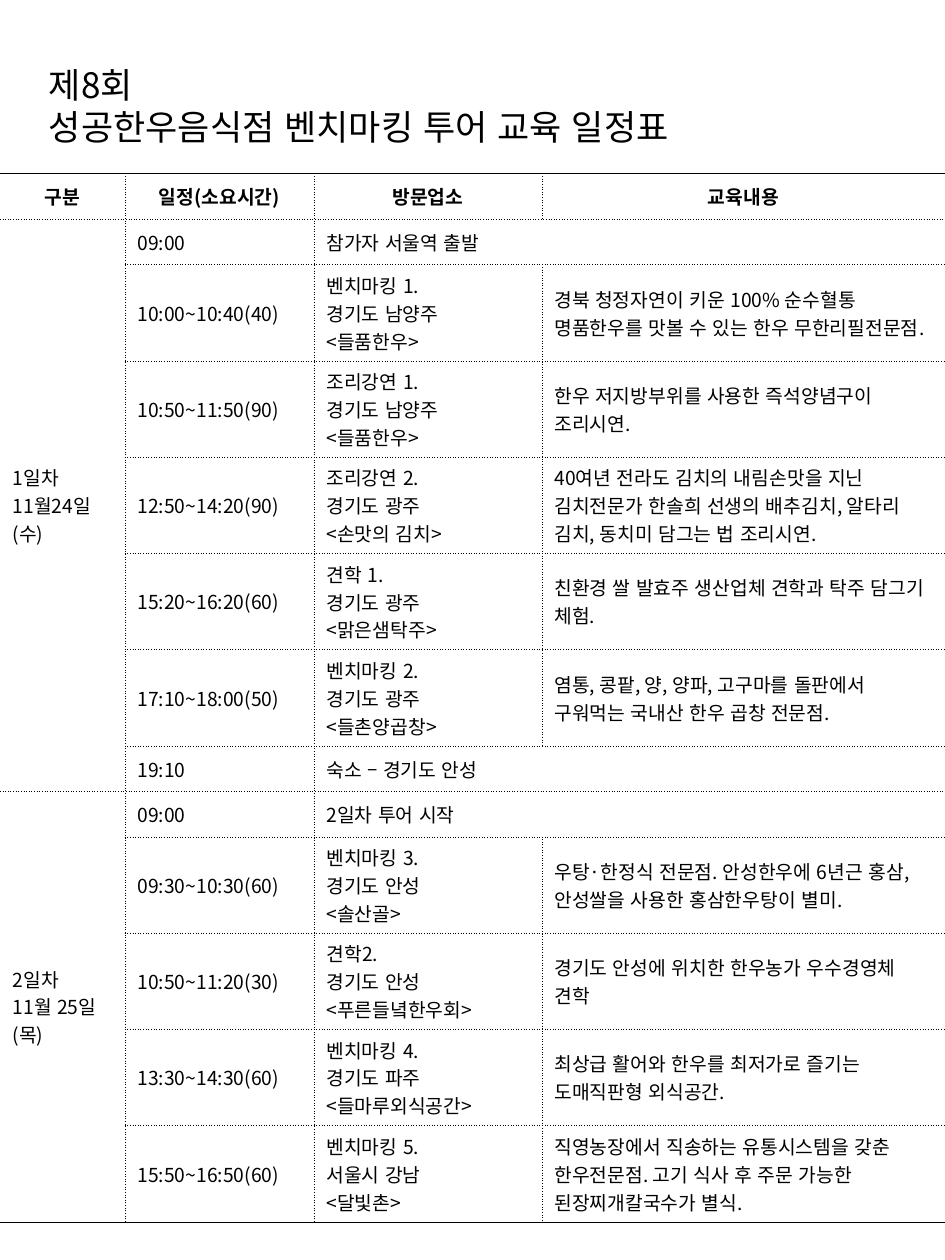
from itertools import product

from lxml.etree import SubElement
from pptx import Presentation
from pptx.dml.color import RGBColor
from pptx.enum.lang import MSO_LANGUAGE_ID
from pptx.enum.text import MSO_ANCHOR, PP_ALIGN
from pptx.oxml import parse_xml
from pptx.oxml.ns import nsdecls, qn
from pptx.util import Pt

COLORS = {"text": "000000", "line": "000000"}
COLUMN_WIDTHS = [71.4, 108.0, 130.2, 230.4]
SHORT_ROW, TALL_ROW = 26, 55

HEADINGS = ["구분", "일정(소요시간)", "방문업소", "교육내용"]

# Each day: label, then (time, visit, content); no content means a wide cell
DAYS = [
    ("1일차\n11월24일\n(수)", [
        ("09:00", "참가자 서울역 출발", None),
        ("10:00~10:40(40)", "벤치마킹 1.\n경기도 남양주\n<들품한우>",
         "경북 청정자연이 키운 100% 순수혈통 명품한우를 맛볼 수 있는 한우 무한리필전문점."),
        ("10:50~11:50(90)", "조리강연 1.\n경기도 남양주\n<들품한우>",
         "한우 저지방부위를 사용한 즉석양념구이\n조리시연."),
        ("12:50~14:20(90)", "조리강연 2.\n경기도 광주\n<손맛의 김치>",
         "40여년 전라도 김치의 내림손맛을 지닌 김치전문가 한솔희 선생의 배추김치, "
         "알타리 김치, 동치미 담그는 법 조리시연."),
        ("15:20~16:20(60)", "견학 1.\n경기도 광주\n<맑은샘탁주>",
         "친환경 쌀 발효주 생산업체 견학과 탁주 담그기 체험."),
        ("17:10~18:00(50)", "벤치마킹 2.\n경기도 광주\n<들촌양곱창>",
         "염통, 콩팥, 양, 양파, 고구마를 돌판에서 구워먹는 국내산 한우 곱창 전문점."),
        ("19:10", "숙소 – 경기도 안성", None),
    ]),
    ("2일차\n11월 25일\n(목)", [
        ("09:00", "2일차 투어 시작", None),
        ("09:30~10:30(60)", "벤치마킹 3.\n경기도 안성\n<솔산골>",
         "우탕·한정식 전문점. 안성한우에 6년근 홍삼, 안성쌀을 사용한 홍삼한우탕이 별미."),
        ("10:50~11:20(30)", "견학2.\n경기도 안성\n<푸른들녘한우회>",
         "경기도 안성에 위치한 한우농가 우수경영체 견학"),
        ("13:30~14:30(60)", "벤치마킹 4.\n경기도 파주\n<들마루외식공간>",
         "최상급 활어와 한우를 최저가로 즐기는 도매직판형 외식공간."),
        ("15:50~16:50(60)", "벤치마킹 5.\n서울시 강남\n<달빛촌>",
         "직영농장에서 직송하는 유통시스템을 갖춘 한우전문점. "
         "고기 식사 후 주문 가능한 된장찌개칼국수가 별식."),
    ]),
]


class SchedulePage:
    font = "Noto Sans CJK KR"

    def __init__(self, deck):
        self.page = deck.slides.add_slide(deck.slide_layouts[6])

    def format_text(self, frame, size, bold=False, align=PP_ALIGN.LEFT):
        for paragraph in frame.paragraphs:
            paragraph.alignment = align
            for span in paragraph.runs:
                span.font.name = self.font
                span.font.size = Pt(size)
                span.font.bold = bold
                span.font.color.rgb = RGBColor.from_string(COLORS["text"])
                span.font.language_id = MSO_LANGUAGE_ID.KOREAN
                east_asian = SubElement(span.font._element, qn("a:ea"))
                east_asian.set("typeface", self.font)

    def title(self, text, left, top, width, height):
        box = self.page.shapes.add_textbox(Pt(left), Pt(top), Pt(width), Pt(height))
        frame = box.text_frame
        frame.word_wrap = True
        frame.vertical_anchor = MSO_ANCHOR.MIDDLE
        frame.text = text
        self.format_text(frame, 20)

    def table(self, left, top, widths, heights):
        frame = self.page.shapes.add_table(
            len(heights), len(widths), Pt(left), Pt(top), Pt(sum(widths)), Pt(sum(heights)))
        table = frame.table
        table.first_row = table.horz_banding = False
        for column, width in zip(table.columns, widths):
            column.width = Pt(width)
        for row, height in zip(table.rows, heights):
            row.height = Pt(height)
        return table

    def cell(self, cell, text, heading=False):
        cell.text_frame.text = text
        cell.vertical_anchor = MSO_ANCHOR.MIDDLE
        align = PP_ALIGN.CENTER if heading else PP_ALIGN.LEFT
        self.format_text(cell.text_frame, 11, heading, align)

    def cell_borders(self, cell, dashes):
        cell.fill.background()
        properties = cell._tc.get_or_add_tcPr()
        for index, (side, dash) in enumerate(zip("LRTB", dashes)):
            paint = "<a:noFill/>" if dash is None else (
                f'<a:solidFill><a:srgbClr val="{COLORS["line"]}"/></a:solidFill>'
                f'<a:prstDash val="{dash}"/>')
            properties.insert(index, parse_xml(
                f'<a:ln{side} {nsdecls("a")} w="{Pt(0.25)}">{paint}</a:ln{side}>'))

    def borders(self, table):
        """Solid rules above and below, dots inside, open left and right."""
        rows, columns = len(table.rows), len(table.columns)
        for top, left in product(range(rows), range(columns)):
            origin = table.cell(top, left)
            if origin.is_spanned:
                continue
            bottom = top + (origin.span_height if origin.is_merge_origin else 1)
            right = left + (origin.span_width if origin.is_merge_origin else 1)
            dashes = [
                "sysDot" if left else None,
                "sysDot" if right < columns else None,
                "sysDot" if top else "solid",
                "sysDot" if bottom < rows else "solid",
            ]
            for row, column in product(range(top, bottom), range(left, right)):
                on_edge = [column == left, column == right - 1, row == top, row == bottom - 1]
                is_origin = (row, column) == (top, left)
                self.cell_borders(table.cell(row, column), [
                    dash if edge or is_origin else None
                    for dash, edge in zip(dashes, on_edge)])


def main():
    deck = Presentation()
    deck.slide_width, deck.slide_height = Pt(540), Pt(720)
    schedule = SchedulePage(deck)

    # Title
    schedule.title("제8회\v성공한우음식점 벤치마킹 투어 교육 일정표", 20.9, 0, 499, 120)

    # Timetable
    heights = [SHORT_ROW] + [
        TALL_ROW if content else SHORT_ROW
        for _, visits in DAYS for _, _, content in visits]
    table = schedule.table(0, 99.2, COLUMN_WIDTHS, heights)
    for column, heading in enumerate(HEADINGS):
        schedule.cell(table.cell(0, column), heading, heading=True)

    # Days and their visits
    row = 1
    for label, visits in DAYS:
        day = table.cell(row, 0)
        day.merge(table.cell(row + len(visits) - 1, 0))
        schedule.cell(day, label)
        for time, visit, content in visits:
            schedule.cell(table.cell(row, 1), time)
            schedule.cell(table.cell(row, 2), visit)
            if content:
                schedule.cell(table.cell(row, 3), content)
            else:
                table.cell(row, 2).merge(table.cell(row, 3))
            row += 1
    schedule.borders(table)

    deck.save("out.pptx")


if __name__ == "__main__":
    main()
